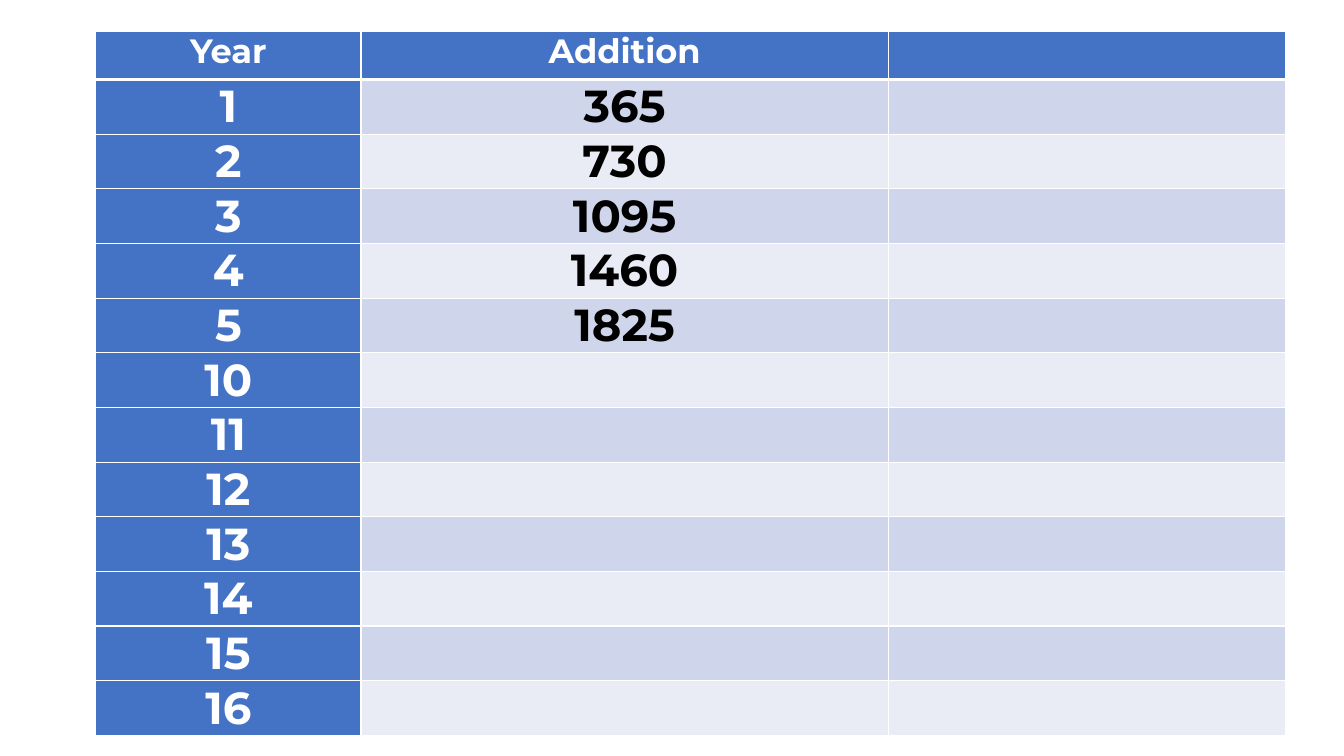
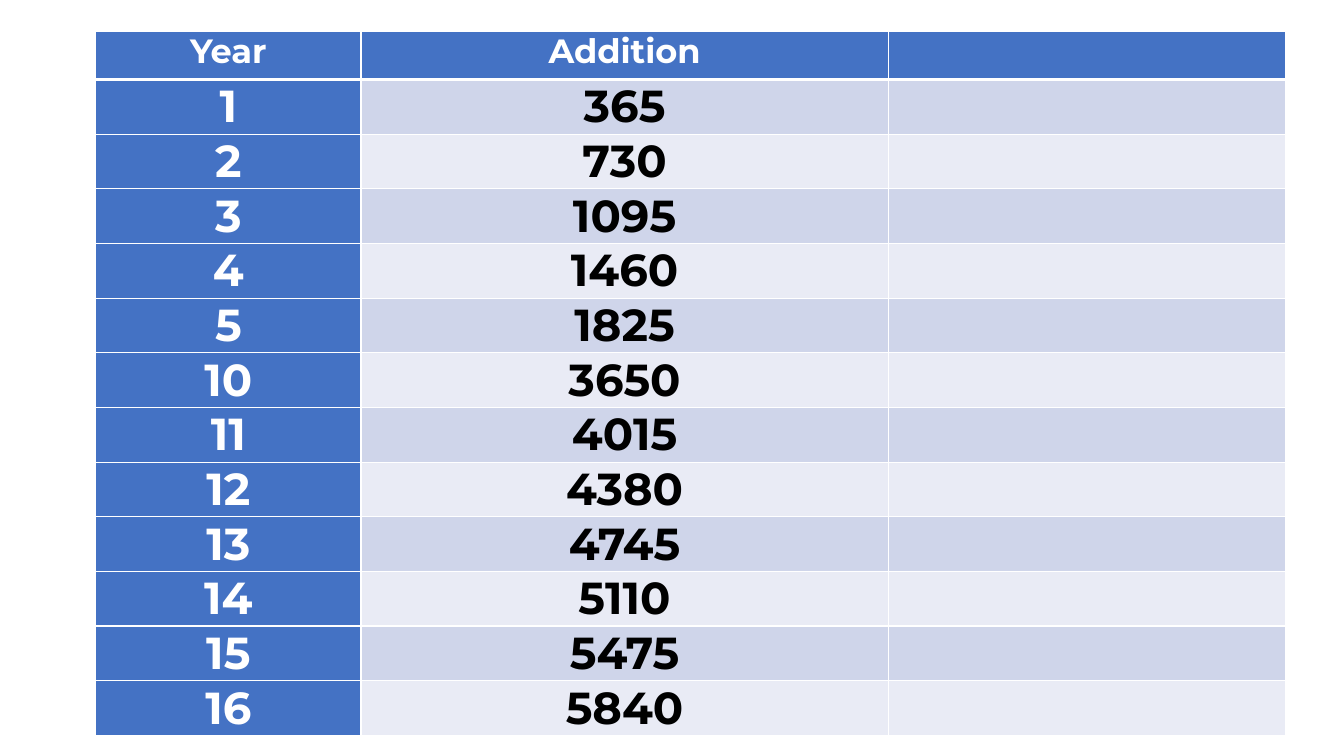
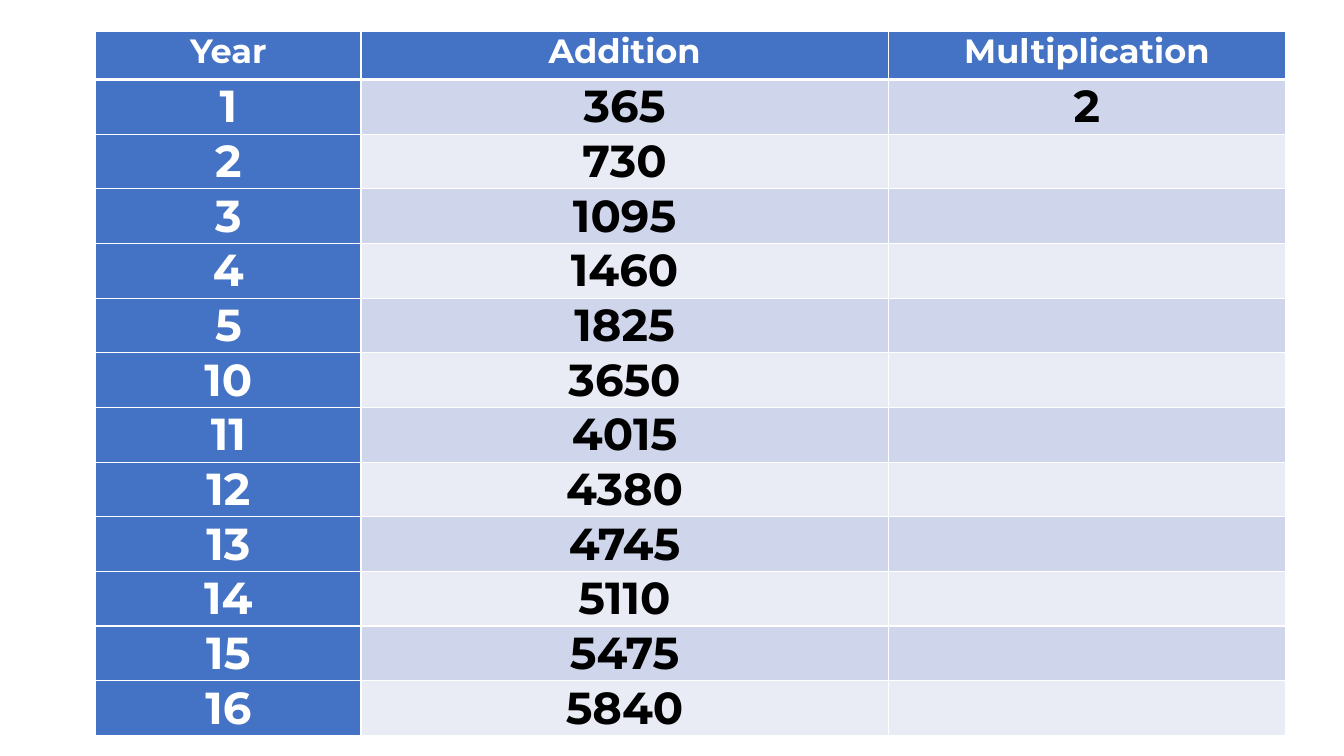
from dataclasses import dataclass

from lxml.etree import SubElement
from pptx import Presentation
from pptx.dml.color import RGBColor
from pptx.enum.text import MSO_ANCHOR, PP_ALIGN
from pptx.oxml.ns import qn
from pptx.util import Emu, Pt


@dataclass(frozen=True)
class Theme:
    """Hold the colours, type and line sizes that all slides share."""

    font: str = "Montserrat"
    blue: str = "4472C4"
    dark: str = "CFD5EA"
    light: str = "E9EBF5"
    white: str = "FFFFFF"
    black: str = "000000"
    head: int = 24
    body: int = 32
    thin: int = 1
    thick: int = 3


THEME = Theme()
SCALE = 9144
SLIDE = (1333, 750)
BOX = (95, 31, 1180, 688)
COLS = (263, 523, 394)
ROW = 48
INSET = 7
DAYS = 365
YEARS = (*range(1, 6), *range(10, 17))
STEPS = (
    (5, "", ()),
    (12, "", ()),
    (12, "Multiplication", (2,)),
)


def px(size):
    """Turn px into EMU."""
    return Emu(size * SCALE)


def add_edge(cell, side, width):
    """Draw one white edge of a cell."""
    line = SubElement(cell._tc.get_or_add_tcPr(), qn(f"a:ln{side}"), w=str(Pt(width)))
    fill = SubElement(line, qn("a:solidFill"))
    SubElement(fill, qn("a:srgbClr"), val=THEME.white)


def fill_cell(cell, text, row, col):
    """Style one cell by its place in the grid and write its text."""
    head, label = row == 0, row == 0 or col == 0
    cell.margin_left = cell.margin_right = px(INSET)
    cell.margin_top = cell.margin_bottom = 0
    cell.vertical_anchor = MSO_ANCHOR.TOP
    widths = {
        "L": THEME.thin,
        "R": THEME.thin,
        "T": THEME.thick if row == 1 else THEME.thin,
        "B": THEME.thick if head else THEME.thin,
    }
    for side, width in widths.items():
        add_edge(cell, side, width)
    band = THEME.dark if row % 2 else THEME.light
    cell.fill.solid()
    cell.fill.fore_color.rgb = RGBColor.from_string(THEME.blue if label else band)
    if not text:
        return
    para = cell.text_frame.paragraphs[0]
    para.alignment = PP_ALIGN.CENTER
    run = para.add_run()
    run.text = text
    font = run.font
    font.name = THEME.font
    font.size = Pt(THEME.head if head else THEME.body)
    font.bold = True
    font.color.rgb = RGBColor.from_string(THEME.white if label else THEME.black)


def make_rows(shown, title, extra):
    """List the texts of the table, row by row."""
    rows = [("Year", "Addition", title)]
    for i, year in enumerate(YEARS):
        total = str(DAYS * year) if i < shown else ""
        rows.append((str(year), total, str(extra[i]) if i < len(extra) else ""))
    return rows


def add_grid(slide, box, rows):
    """Place the table of years in the given box."""
    frame = slide.shapes.add_table(len(rows), len(COLS), *map(px, box))
    table = frame.table
    table.first_col = True
    for col, width in zip(table.columns, COLS):
        col.width = px(width)
    for row in table.rows:
        row.height = px(ROW)
    frame.height = px(box[3])
    for r, texts in enumerate(rows):
        for c, text in enumerate(texts):
            fill_cell(table.cell(r, c), text, r, c)


def main():
    """Build one slide for each step and save the deck."""
    deck = Presentation()
    deck.slide_width, deck.slide_height = map(px, SLIDE)
    for step in STEPS:
        slide = deck.slides.add_slide(deck.slide_layouts[6])
        add_grid(slide, BOX, make_rows(*step))
    deck.save("out.pptx")


if __name__ == "__main__":
    main()
